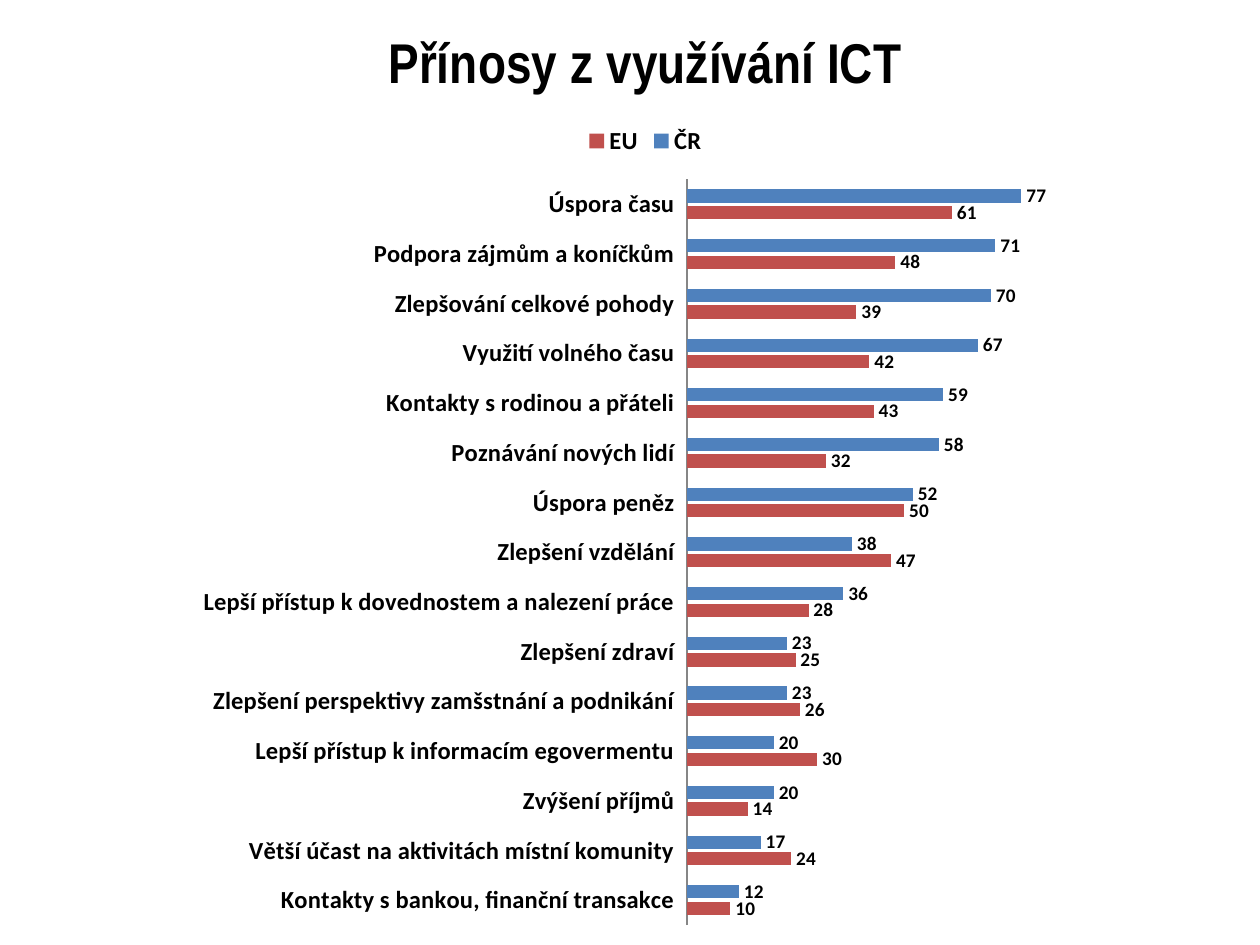
from lxml import etree
from pptx import Presentation
from pptx.chart.data import CategoryChartData
from pptx.dml.color import RGBColor
from pptx.enum.chart import XL_CHART_TYPE, XL_LABEL_POSITION, XL_LEGEND_POSITION, XL_TICK_LABEL_POSITION, XL_TICK_MARK
from pptx.oxml.ns import qn
from pptx.util import Pt

BAR_CLUSTERED = XL_CHART_TYPE.BAR_CLUSTERED
OUTSIDE_END = XL_LABEL_POSITION.OUTSIDE_END
LEGEND_TOP = XL_LEGEND_POSITION.TOP
LABELS_LOW = XL_TICK_LABEL_POSITION.LOW
NO_TICK = XL_TICK_MARK.NONE

PX = 914400 / 126
CHART_BOX = (194, 0, 903, 945)
PLOT_BOX = (493, 180, 391, 746)  # inside the chart frame

BENEFITS = [
    ("Úspora času", 77, 61),
    ("Podpora zájmům a koníčkům", 71, 48),
    ("Zlepšování celkové pohody", 70, 39),
    ("Využití volného času", 67, 42),
    ("Kontakty s rodinou a přáteli", 59, 43),
    ("Poznávání nových lidí", 58, 32),
    ("Úspora peněz", 52, 50),
    ("Zlepšení vzdělání", 38, 47),
    ("Lepší přístup k dovednostem a nalezení práce", 36, 28),
    ("Zlepšení zdraví", 23, 25),
    ("Zlepšení perspektivy zamšstnání a podnikání", 23, 26),
    ("Lepší přístup k informacím egovermentu", 20, 30),
    ("Zvýšení příjmů", 20, 14),
    ("Větší účast na aktivitách místní komunity", 17, 24),
    ("Kontakty s bankou, finanční transakce", 12, 10),
]
SERIES_COLORS = {"ČR": "4F81BD", "EU": "C0504D"}


def color(hex_text):
    return RGBColor.from_string(hex_text)


def set_font(font, size, bold=True, name="Calibri"):
    for key, value in {"size": Pt(size), "bold": bold, "name": name}.items():
        setattr(font, key, value)
    font.color.rgb = color("000000")


deck = Presentation()
deck.slide_width, deck.slide_height = round(1260 * PX), round(945 * PX)
slide = deck.slides.add_slide(deck.slide_layouts[6])

# Chart data
names, czech, european = zip(*BENEFITS)
data = CategoryChartData()
data.categories = names
for name, values in zip(SERIES_COLORS, (czech, european)):
    data.add_series(name, values)
frame = slide.shapes.add_chart(BAR_CLUSTERED, *[round(n * PX) for n in CHART_BOX], data)
chart = frame.chart
set_font(chart.font, 10, bold=False)

# Title and legend
chart.has_title = True
title = chart.chart_title.text_frame
title.text = "Přínosy z využívání ICT"
set_font(title.paragraphs[0].runs[0].font, 32, name="Arial Narrow")
chart.has_legend = True
chart.legend.position = LEGEND_TOP
chart.legend.include_in_layout = False
set_font(chart.legend.font, 14)

# Axes
categories = chart.category_axis
categories.reverse_order = True
categories.major_tick_mark = NO_TICK
categories.tick_label_position = LABELS_LOW
categories.format.line.color.rgb = color("868686")
set_font(categories.tick_labels.font, 14)
scale = chart.value_axis
scale.visible = False
scale.has_major_gridlines = False
scale.minimum_scale, scale.maximum_scale = 0, 90

# Bars and value labels
plot = chart.plots[0]
plot.vary_by_categories = False
plot.gap_width, plot.overlap = 150, -25
for series in plot.series:
    series.format.fill.solid()
    series.format.fill.fore_color.rgb = color(SERIES_COLORS[series.name])
    labels = series.data_labels
    labels.show_value = True
    labels.position = OUTSIDE_END
    set_font(labels.font, 11)

# Fixed plot area, as shares of the chart frame
plot_area = chart._chartSpace.chart.plotArea
for old in plot_area.findall(qn("c:layout")):
    plot_area.remove(old)
layout = etree.Element(qn("c:layout"))
plot_area.insert(0, layout)
manual = etree.SubElement(layout, qn("c:manualLayout"))
settings = {"layoutTarget": "inner", "xMode": "edge", "yMode": "edge"}
for key, length, whole in zip("xywh", PLOT_BOX, CHART_BOX[2:] * 2):
    settings[key] = f"{length / whole:.3f}"
for key, value in settings.items():
    etree.SubElement(manual, qn(f"c:{key}")).set("val", value)

deck.save("out.pptx")
